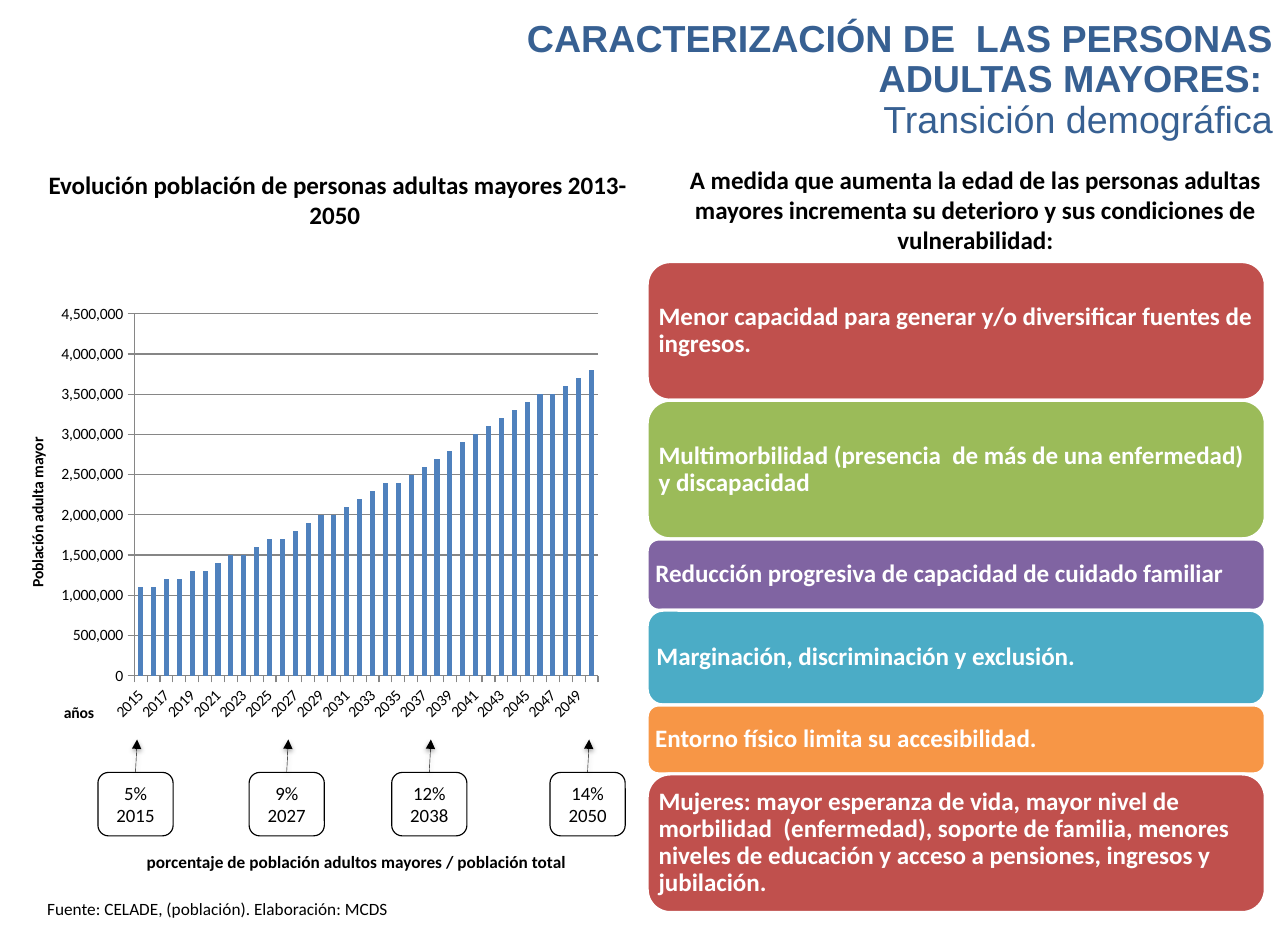
from itertools import accumulate

from pptx import Presentation
from pptx.chart.data import CategoryChartData
from pptx.dml.color import RGBColor
from pptx.enum import chart as ch, shapes, text
from pptx.oxml import parse_xml
from pptx.oxml.ns import nsdecls, qn
from pptx.util import Pt

HUES = {
    "title": "376092", "ink": "000000", "paper": "FFFFFF", "grid": "868686",
    "bar": "4F81BD", "red": "C0504D", "green": "9BBB59",
    "plum": "8064A2", "teal": "4BACC6", "amber": "F79646",
}
TENTHS = [11, 11, 12, 12, 13, 13, 14, 15, 15, 16, 17, 17,
          18, 19, 20, 20, 21, 22, 23, 24, 24, 25, 26, 27,
          28, 29, 30, 31, 32, 33, 34, 35, 35, 36, 37, 38]
CARDS = [
    ("red", 88.5, "Menor capacidad para generar y/o diversificar fuentes de ingresos."),
    ("green", 88.5, "Multimorbilidad (presencia  de más de una enfermedad) y discapacidad"),
    ("plum", 45.5, "Reducción progresiva de capacidad de cuidado familiar"),
    ("teal", 60.5, "Marginación, discriminación y exclusión."),
    ("amber", 44, "Entorno físico limita su accesibilidad."),
    ("red", 88.5, "Mujeres: mayor esperanza de vida, mayor nivel de morbilidad  "
     "(enfermedad), soporte de familia, menores niveles de educación y acceso "
     "a pensiones, ingresos y jubilación."),
]
MARKS = [(0, "5%\n2015"), (96.5, "9%\n2027"), (187.5, "12%\n2038"), (288.5, "14%\n2050")]


def hue(name):
    """Return the named colour."""
    return RGBColor.from_string(HUES[name])


def style(font, size, color="ink", bold=False, face="Calibri"):
    """Format a font."""
    font.name, font.size, font.bold = face, Pt(size), bold
    font.color.rgb = hue(color)


def write(shape, words, size, color="ink", bold=False, align=None):
    """Fill a shape with wrapped text."""
    frame = shape.text_frame
    frame.word_wrap = True
    frame.text = words
    for para in frame.paragraphs:
        para.alignment = align
        for run in para.runs:
            style(run.font, size, color, bold)
    return frame


def label(slide, box, words, size, bold=False, align=None):
    """Place a text box."""
    shape = slide.shapes.add_textbox(*map(Pt, box))
    write(shape, words, size, bold=bold, align=align)


def head(slide, box):
    """Place the two-part slide title."""
    title = slide.shapes.title
    title.left, title.top, title.width, title.height = map(Pt, box)
    frame = title.text_frame
    frame.auto_size = text.MSO_AUTO_SIZE.NONE
    frame.vertical_anchor = text.MSO_ANCHOR.MIDDLE
    para = frame.paragraphs[0]
    para.text = "CARACTERIZACIÓN DE  LAS PERSONAS ADULTAS MAYORES: \vTransición demográfica"
    para.alignment, para.line_spacing = text.PP_ALIGN.RIGHT, 0.9
    for run, bold in zip(para.runs, (True, False)):
        style(run.font, 24, "title", bold, "Arial")


def pin(node, spot, inner=False):
    """Give a chart part a fixed place, in fractions of the chart."""
    old = node.find(qn("c:layout"))
    if old is not None:
        node.remove(old)
    tags = '<c:layoutTarget val="inner"/>' if inner else ""
    tags += '<c:xMode val="edge"/><c:yMode val="edge"/>'
    tags += "".join(f'<c:{key} val="{val}"/>' for key, val in zip("xywh", spot))
    node.insert(0 if inner else 1, parse_xml(
        f'<c:layout {nsdecls("c")}><c:manualLayout>{tags}</c:manualLayout></c:layout>'))


def name_axis(axis, words, spot):
    """Title an axis and style its line and ticks."""
    frame = axis.axis_title.text_frame
    frame.text = words
    style(frame.paragraphs[0].runs[0].font, 10, bold=True)
    pin(axis.axis_title._element, spot)
    axis.major_tick_mark = ch.XL_TICK_MARK.OUTSIDE
    axis.format.line.color.rgb = hue("grid")
    style(axis.tick_labels.font, 10)


def graph(slide, box):
    """Place the population column chart."""
    data = CategoryChartData(number_format="#,##0")
    data.categories = [str(2015 + step) for step in range(len(TENTHS))]
    data.add_series("Población adulta mayor", [val * 100000 for val in TENTHS])
    chart = slide.shapes.add_chart(
        ch.XL_CHART_TYPE.COLUMN_CLUSTERED, *map(Pt, box), data).chart
    chart.has_legend = chart.has_title = False
    style(chart.font, 10)
    plot = chart.plots[0]
    plot.gap_width, plot.vary_by_categories = 150, False
    fill = plot.series[0].format.fill
    fill.solid()
    fill.fore_color.rgb = hue("bar")
    years, count = chart.category_axis, chart.value_axis
    name_axis(years, "años", (0.1, 0.84))
    name_axis(count, "Población adulta mayor", (0.04, 0.29))
    years._element.find(qn("c:txPr")).find(qn("a:bodyPr")).set("rot", "-2700000")
    years._element.find(qn("c:noMultiLvlLbl")).addprevious(
        parse_xml(f'<c:tickLblSkip {nsdecls("c")} val="2"/>'))
    count.minimum_scale, count.maximum_scale, count.major_unit = 0, 4500000, 500000
    count.tick_labels.number_format = "#,##0"
    count.tick_labels.number_format_is_linked = False
    count.major_gridlines.format.line.color.rgb = hue("grid")
    pin(chart._chartSpace.chart.plotArea, (0.22, 0.04, 0.76, 0.75), True)


def arrow(slide, start, end):
    """Draw a thin arrow with a soft shadow."""
    line = slide.shapes.add_connector(
        shapes.MSO_CONNECTOR.STRAIGHT, *map(Pt, start + end))
    line.line.color.rgb, line.line.width = hue("ink"), Pt(0.25)
    line.line._get_or_add_ln().append(
        parse_xml(f'<a:tailEnd {nsdecls("a")} type="triangle"/>'))
    line._element.spPr.append(parse_xml(
        f'<a:effectLst {nsdecls("a")}><a:outerShdw blurRad="39370" dist="20320" '
        f'dir="5400000" rotWithShape="0"><a:srgbClr val="{HUES["ink"]}">'
        '<a:alpha val="38000"/></a:srgbClr></a:outerShdw></a:effectLst>'))


def block(slide, box):
    """Add a plain rounded box with centred height."""
    shape = slide.shapes.add_shape(
        shapes.MSO_SHAPE.ROUNDED_RECTANGLE, *map(Pt, box))
    shape.shadow.inherit = False
    shape.text_frame.vertical_anchor = text.MSO_ANCHOR.MIDDLE
    return shape


def shares(slide, box):
    """Place the share boxes and their arrows."""
    left, top, width, height = box
    for shift, words in MARKS:
        spot = left + shift
        shape = block(slide, (spot, top, width, height))
        shape.fill.background()
        shape.line.color.rgb, shape.line.width = hue("ink"), Pt(0.75)
        write(shape, words, 12, align=text.PP_ALIGN.CENTER)
        mid = spot + width / 2
        arrow(slide, (mid, top), (mid + 1, top - 21))


def stack(slide, box):
    """Pile up the coloured cards."""
    left, top, width = box
    tops = accumulate((tall for _, tall, _ in CARDS), initial=top)
    for (color, tall, words), edge in zip(CARDS, tops):
        shape = block(slide, (left, edge, width, tall))
        shape.fill.solid()
        shape.fill.fore_color.rgb = hue(color)
        shape.line.color.rgb, shape.line.width = hue("paper"), Pt(2)
        frame = write(shape, words, 16, "paper", True, text.PP_ALIGN.LEFT)
        frame.margin_left = frame.margin_right = Pt(3)
        frame.margin_top = frame.margin_bottom = Pt(3)
        frame.paragraphs[0].line_spacing = 0.9


def main():
    """Build the slide and save it."""
    deck = Presentation()
    deck.slide_width, deck.slide_height = Pt(822), Pt(595.5)
    slide = deck.slides.add_slide(deck.slide_layouts[5])
    mid = text.PP_ALIGN.CENTER
    head(slide, (268, 13, 551.5, 77))
    label(slide, (18.5, 104.5, 394, 46),
          "Evolución población de personas adultas mayores 2013-2050 ", 16, True, mid)
    label(slide, (23, 569.5, 245, 21), "Fuente: CELADE, (población). Elaboración: MCDS", 11)
    graph(slide, (0, 188, 389.5, 308))
    stack(slide, (413, 167, 394.5))
    label(slide, (425.5, 101.5, 394, 65.5),
          "A medida que aumenta la edad de las personas adultas mayores "
          "incrementa su deterioro y sus condiciones de vulnerabilidad:", 16, True, mid)
    shares(slide, (62.5, 493, 48, 40.5))
    label(slide, (86.5, 540, 289, 21),
          "porcentaje de población adultos mayores / población total", 11, True)
    deck.save("out.pptx")


if __name__ == "__main__":
    main()
